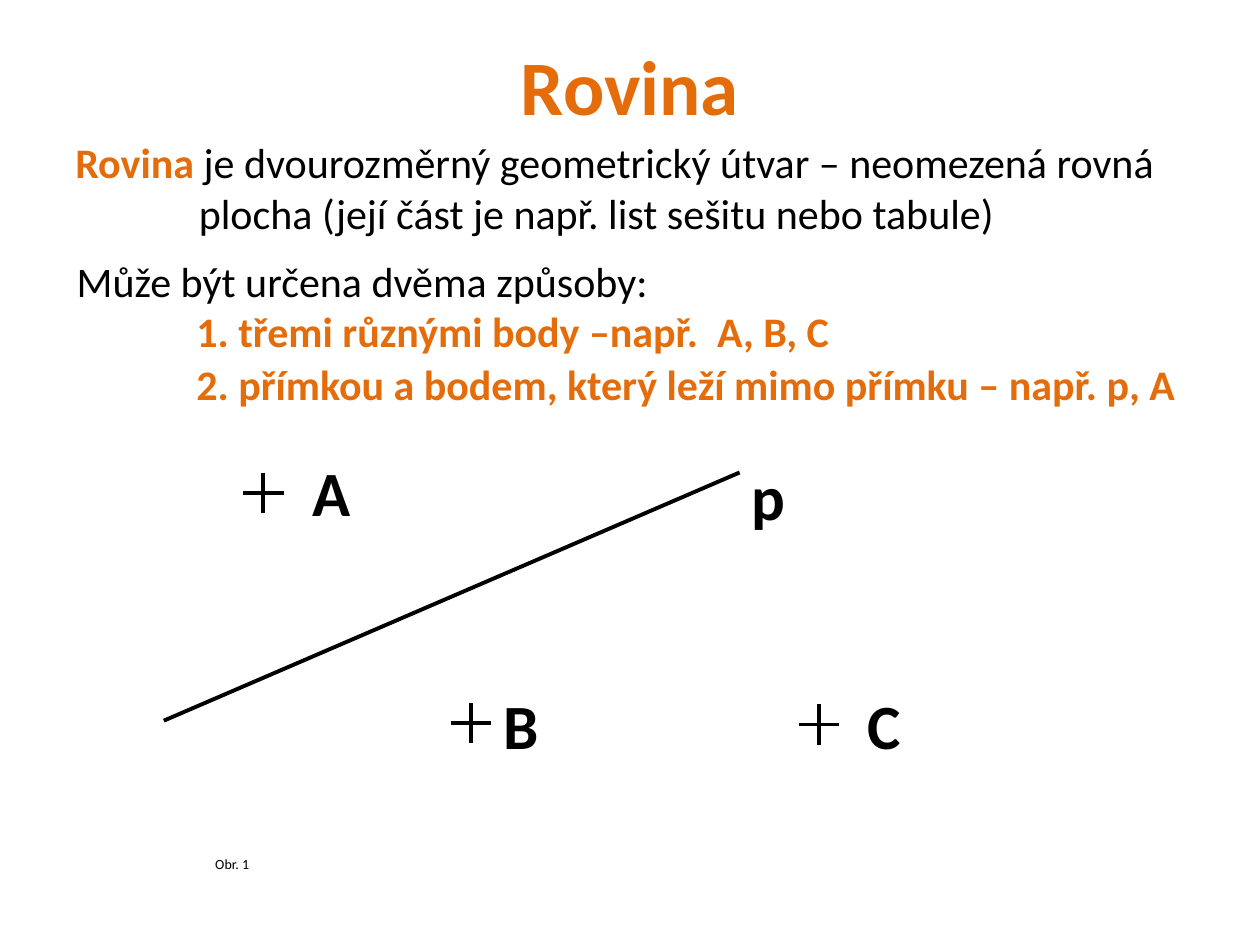
import pptx
import pptx.util
import pptx.dml.color
import pptx.enum.text
import pptx.enum.shapes
import pptx.oxml.ns
import lxml.etree

BLACK, ORANGE = "000000", "E46C0A"
ANCHOR = pptx.enum.text.MSO_ANCHOR
PLAIN = {"size": 24, "bold": False, "color": BLACK}
STRONG = {"size": 24, "bold": True, "color": ORANGE}
LABEL = {"size": 36, "bold": True, "color": BLACK}
HEAD = {"size": 44, "bold": True, "color": ORANGE}
SMALL = {"size": 8, "bold": False, "color": BLACK}


def paint(color, code):
    color.rgb = pptx.dml.color.RGBColor.from_string(code)


def grid(*cells):
    return [pptx.util.Inches(cell / 10) for cell in cells]


def shift(box, left, top, *size):
    return grid(box[0] + left, box[1] + top, *size)


def write(par, text, style):
    run = par.add_run()
    run.text = text
    run.font.name = "Calibri"
    run.font.size = pptx.util.Pt(style["size"])
    run.font.bold = style["bold"]
    paint(run.font.color, style["color"])


def add_text(shapes, place, lines, **format):
    frame = shapes.add_textbox(*place).text_frame
    values = {"word_wrap": True, "vertical_anchor": ANCHOR.MIDDLE} | format
    for name, value in values.items():
        setattr(frame, name, value)
    for index, runs in enumerate(lines):
        par = frame.add_paragraph() if index else frame.paragraphs[0]
        for text, style in runs:
            write(par, text, style)
    return frame


def add_line(shapes, start, end):
    kind = pptx.enum.shapes.MSO_CONNECTOR.STRAIGHT
    line = shapes.add_connector(kind, *start, *end)
    line.line.width = pptx.util.Pt(2.25)
    paint(line.line.color, BLACK)
    props = line._element.spPr
    lxml.etree.SubElement(props, pptx.oxml.ns.qn("a:effectLst"))


def add_cross(shapes, box, x, y, arm=1.6):
    add_line(shapes, shift(box, x, y - arm), shift(box, x, y + arm))
    add_line(shapes, shift(box, x - arm, y), shift(box, x + arm, y))


def add_label(shapes, box, text, x, y, width):
    add_text(shapes, shift(box, x, y, width, 7.1), [[(text, LABEL)]],
             word_wrap=False, vertical_anchor=ANCHOR.TOP)


def add_title(slide, box):
    title = slide.shapes.title
    names = ("left", "top", "width", "height")
    for name, value in zip(names, grid(*box)):
        setattr(title, name, value)
    frame = title.text_frame
    frame.vertical_anchor = ANCHOR.MIDDLE
    par = frame.paragraphs[0]
    par.alignment = pptx.enum.text.PP_ALIGN.CENTER
    write(par, "Rovina", HEAD)


def add_facts(shapes, box):
    width = box[2]
    facts = add_text(shapes, shift(box, 0, 0, width, 6.7), [
        [("Rovina ", STRONG),
         ("je dvourozměrný geometrický útvar – neomezená rovná", PLAIN)],
        [("plocha (její část je např. list sešitu nebo tabule)", PLAIN)]])
    indent = facts.paragraphs[1]._p.get_or_add_pPr()
    indent.set("marL", str(pptx.util.Inches(0.98)))
    add_text(shapes, shift(box, 0.1, 5.2, width - 2.9, 7.1),
             [[("Může být určena dvěma způsoby:", PLAIN)]],
             vertical_anchor=ANCHOR.TOP, margin_top=pptx.util.Inches(0.36))
    ways = (("1. třemi různými body –např.  A, B, C", 12.6, 4.3),
            ("2. přímkou a bodem, který leží mimo přímku – např. p, A", 15.8, 6.3))
    for text, top, height in ways:
        add_text(shapes, shift(box, 9.6, top, width, height), [[(text, STRONG)]])


def add_figure(shapes, box):
    add_line(shapes, shift(box, 0, 21.7), shift(box, 45.7, 2))
    groups = ((("A", 7.9, 3.6, 10.8, 0, 5.1),),
              (("C", 52, 22, 54.9, 18.5, 4.7),
               ("B", 24.4, 21.9, 26, 18.5, 4.8)))
    for marks in groups:
        group = shapes.add_group_shape().shapes
        for text, x, y, left, top, width in marks:
            add_cross(group, box, x, y)
            add_label(group, box, text, left, top, width)
    add_label(shapes, box, "p", 45.7, 0.3, 4.7)
    add_text(shapes, shift(box, 3.1, 31.9, 11.8, 2.4), [[("Obr. 1", SMALL)]],
             vertical_anchor=ANCHOR.TOP)


def main():
    deck = pptx.Presentation()
    deck.slide_width, deck.slide_height = grid(100, 75)
    slide = deck.slides.add_slide(deck.slide_layouts[5])
    add_title(slide, (5, 3, 90, 7.5))
    add_facts(slide.shapes, (5, 11.5, 88))
    add_figure(slide.shapes, (13, 35.5))
    deck.save("out.pptx")


if __name__ == "__main__":
    main()
